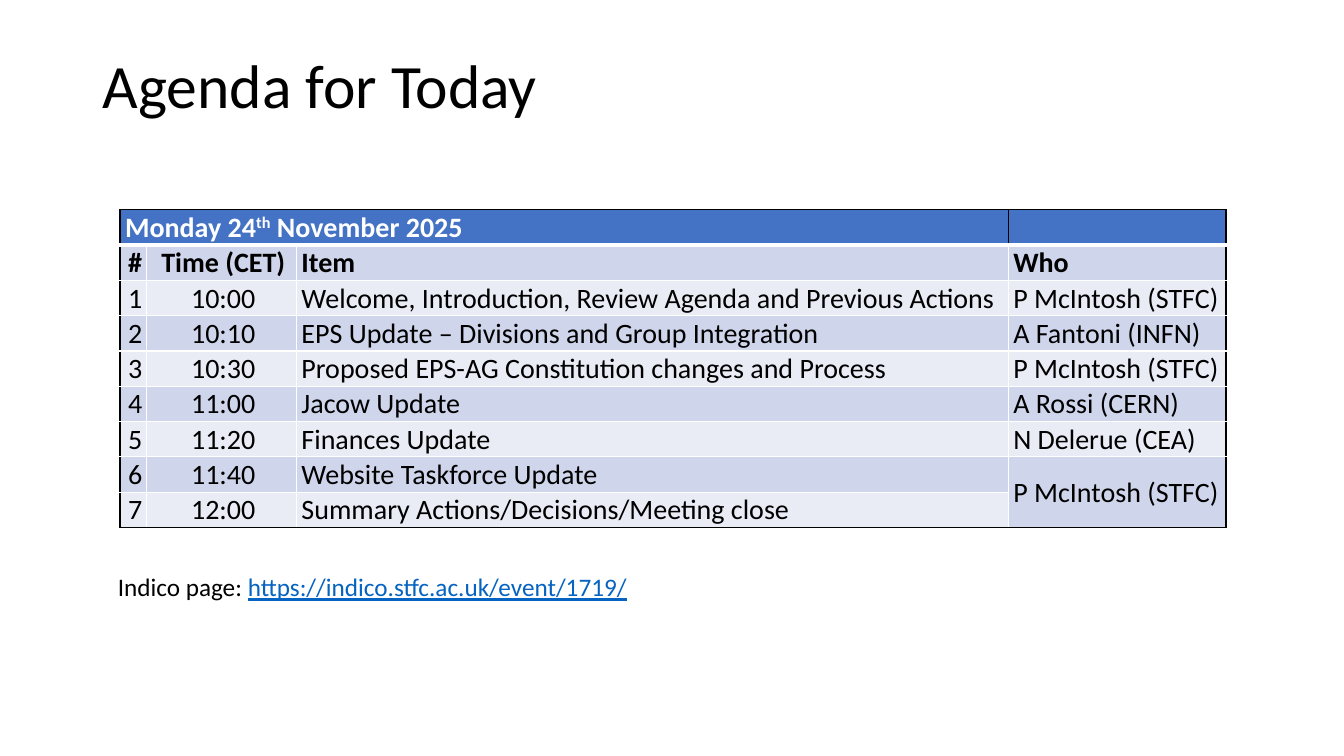
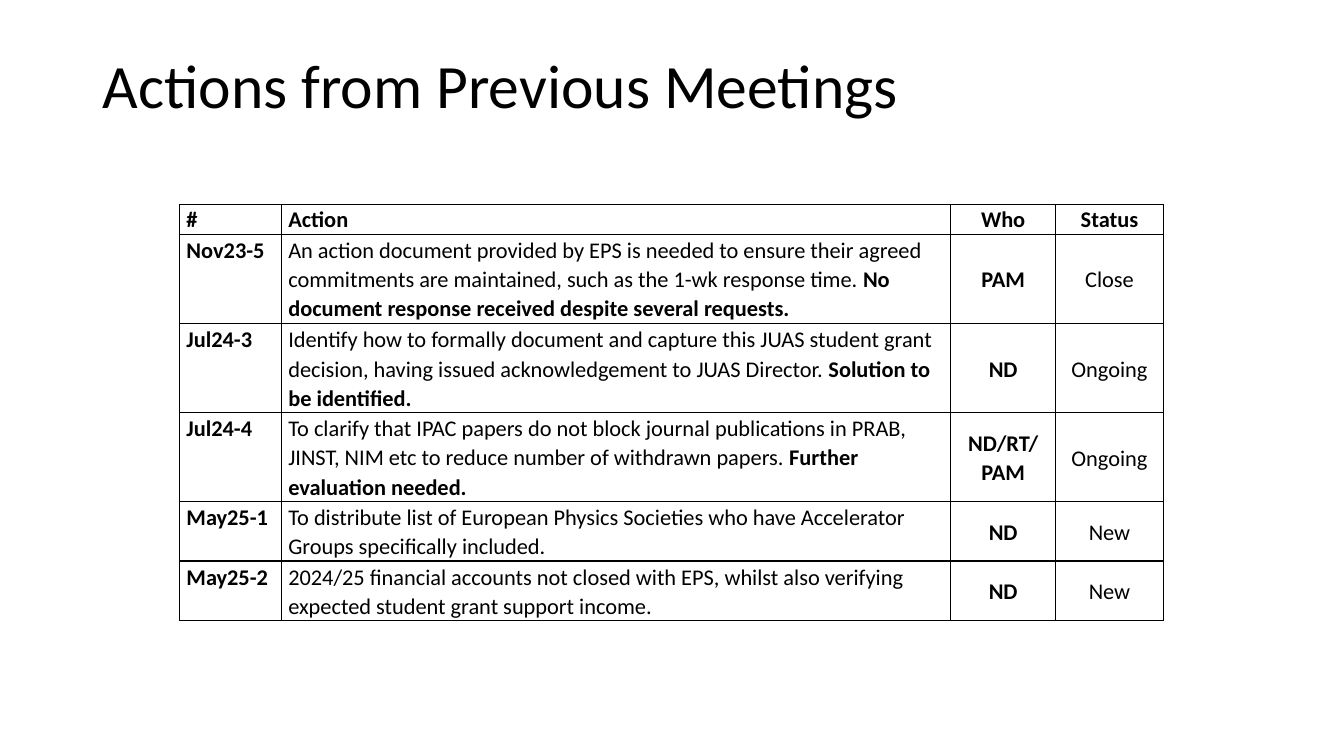
import pptx
import pptx.dml.color
import pptx.enum.text
import pptx.oxml
import pptx.oxml.ns
import pptx.util

Inches = pptx.util.Inches
Pt = pptx.util.Pt
Align = pptx.enum.text.PP_ALIGN
Anchor = pptx.enum.text.MSO_ANCHOR


class Theme:
    font = "Calibri"
    black, white = "000000", "FFFFFF"
    head, dark, light = "4472C4", "CFD5EA", "E9EBF5"
    link = "0563C1"
    title, agenda, note, action = 44, 20, 18, 16


AGENDA = [
    ["#", "Time (CET)", "Item", "Who"],
    ["1", "10:00", "Welcome, Introduction, Review Agenda and Previous Actions",
     "P McIntosh (STFC)"],
    ["2", "10:10", "EPS Update – Divisions and Group Integration", "A Fantoni (INFN)"],
    ["3", "10:30", "Proposed EPS-AG Constitution changes and Process",
     "P McIntosh (STFC)"],
    ["4", "11:00", "Jacow Update", "A Rossi (CERN)"],
    ["5", "11:20", "Finances Update", "N Delerue (CEA)"],
    ["6", "11:40", "Website Taskforce Update", "P McIntosh (STFC)"],
    ["7", "12:00", "Summary Actions/Decisions/Meeting close", ""],
]

# Number, action, bold remark, owner, status
ACTIONS = [
    ["Nov23-5", "An action document provided by EPS is needed to ensure their agreed "
     "commitments are maintained, such as the 1-wk response time. ",
     "No document response received despite several requests.", "PAM", "Close"],
    ["Jul24-3", "Identify how to formally document and capture this JUAS student grant "
     "decision, having issued acknowledgement to JUAS Director. ",
     "Solution to be identified.", "ND", "Ongoing"],
    ["Jul24-4", "To clarify that IPAC papers do not block journal publications in PRAB, "
     "JINST, NIM etc to reduce number of withdrawn papers. ",
     "Further evaluation needed.", "ND/RT/PAM", "Ongoing"],
    ["May25-1", "To distribute list of European Physics Societies who have Accelerator "
     "Groups specifically included.", "", "ND", "New"],
    ["May25-2", "2024/25 financial accounts not closed with EPS, whilst also verifying "
     "expected student grant support income.", "", "ND", "New"],
]


def apply(item, values):
    for name, value in values.items():
        setattr(item, name, value)


def write(para, runs, size, color=Theme.black, **format):
    """Add (text, font values) runs to a paragraph."""
    apply(para, format)
    for text, values in runs:
        run = para.add_run()
        run.text = text
        run.font.color.rgb = pptx.dml.color.RGBColor.from_string(color)
        apply(run.font, {"name": Theme.font, "size": Pt(size), **values})


def border(cell, sides):
    """Draw (colour, width) lines for the L, R, T and B sides."""
    props = cell._tc.get_or_add_tcPr()
    for place, side in enumerate("LRTB"):
        color, width = sides[side]
        props.insert(place, pptx.oxml.parse_xml(
            f'<a:ln{side} {pptx.oxml.ns.nsdecls("a")} w="{Pt(width)}">'
            f'<a:solidFill><a:srgbClr val="{color}"/></a:solidFill></a:ln{side}>'))


def grid(slide, left, top, cols, rows):
    frame = slide.shapes.add_table(len(rows), len(cols), Inches(left), Inches(top),
                                   Inches(sum(cols)), Inches(sum(rows)))
    table = frame.table
    apply(table, {"first_row": False, "horz_banding": False})
    for col, width in zip(table.columns, cols):
        col.width = Inches(width)
    for row, height in zip(table.rows, rows):
        row.height = Inches(height)
    return table


def inset(cell, side, top, bottom, anchor):
    apply(cell, {"margin_left": Inches(side), "margin_right": Inches(side),
                 "margin_top": Inches(top), "margin_bottom": Inches(bottom),
                 "vertical_anchor": anchor})


def titled(deck, text):
    slide = deck.slides.add_slide(deck.slide_layouts[5])
    title = slide.shapes.title
    apply(title, {"left": Inches(0.92), "top": Inches(0.4),
                  "width": Inches(11.5), "height": Inches(0.96)})
    title.text_frame.vertical_anchor = Anchor.MIDDLE
    write(title.text_frame.paragraphs[0], [(text, {})], Theme.title,
          alignment=Align.LEFT, line_spacing=0.9)
    return slide


def agenda_grid(slide, left, top):
    count = len(AGENDA) + 1
    table = grid(slide, left, top, [0.26, 1.49, 7.06, 2.16], [0.35] * count)
    table.cell(0, 0).merge(table.cell(0, 2))
    table.cell(count - 2, 3).merge(table.cell(count - 1, 3))

    for r in range(count):
        for c in range(4):
            cell = table.cell(r, c)
            tall = cell.is_merge_origin and cell.span_height > 1
            inset(cell, 0.01, 0.01, 0, Anchor.MIDDLE if tall else Anchor.BOTTOM)
            fill = Theme.head if r == 0 else Theme.dark if r % 2 else Theme.light
            cell.fill.solid()
            cell.fill.fore_color.rgb = pptx.dml.color.RGBColor.from_string(fill)

            # Black outside and around the heading, white inside
            last = r + (cell.span_height if tall else 1) == count
            edges = {"L": r == 0 or c == 0, "R": r == 0 or c == 3, "T": r == 0, "B": last}
            sides = {side: (Theme.black if edge else Theme.white, 1)
                     for side, edge in edges.items()}
            if r < 2:
                sides["B" if r == 0 else "T"] = (Theme.white, 3)
            border(cell, sides)

            if r and AGENDA[r - 1][c]:
                para = cell.text_frame.paragraphs[0]
                para._p.get_or_add_pPr().set("marL", str(Inches(0.04)))
                write(para, [(AGENDA[r - 1][c], {"bold": r == 1})], Theme.agenda,
                      alignment=Align.CENTER if c < 2 else Align.LEFT)

    # Date heading with a raised ordinal
    date = table.cell(0, 0).text_frame.paragraphs[0]
    date._p.get_or_add_pPr().set("marL", str(Inches(0.04)))
    bold = {"bold": True}
    write(date, [("Monday 24", bold), ("th", bold), (" November 2025", bold)],
          Theme.agenda, Theme.white)
    date.runs[1]._r.get_or_add_rPr().set("baseline", "30000")


def page_note(slide, left, top):
    box = slide.shapes.add_textbox(Inches(left), Inches(top), Inches(5.32), Inches(0.4))
    para = box.text_frame.paragraphs[0]
    write(para, [("Indico page: ", {})], Theme.note)
    write(para, [("https://indico.stfc.ac.uk/event/1719/", {"underline": True})],
          Theme.note, Theme.link)


def action_grid(slide, left, top):
    table = grid(slide, left, top, [1.01, 6.64, 1.04, 1.07],
                 [0.3] + [0.88] * 3 + [0.59] * 2)
    bold, plain = {"bold": True}, {"bold": False}
    rows = [[[(name, bold)] for name in ("#", "Action", "Who", "Status")]]
    for code, task, remark, who, state in ACTIONS:
        runs = [(task, plain)] + ([(remark, bold)] if remark else [])
        rows.append([[(code, bold)], runs, [(who, bold)], [(state, plain)]])

    for r, row in enumerate(rows):
        for c, runs in enumerate(row):
            cell = table.cell(r, c)
            inset(cell, 0.07, 0.01 if r > 1 else 0, 0,
                  Anchor.MIDDLE if r and c > 1 else Anchor.TOP)
            cell.fill.background()
            border(cell, dict.fromkeys("LRTB", (Theme.black, 1)))
            write(cell.text_frame.paragraphs[0], runs, Theme.action,
                  alignment=Align.CENTER if c > 1 else Align.LEFT,
                  line_spacing=1.07, space_after=Pt(8))


def main():
    deck = pptx.Presentation()
    apply(deck, {"slide_width": Inches(13.33), "slide_height": Inches(7.5)})

    # Agenda
    slide = titled(deck, "Agenda for Today")
    agenda_grid(slide, 1.19, 2.08)
    page_note(slide, 1.07, 5.62)

    # Actions
    slide = titled(deck, "Actions from Previous Meetings")
    action_grid(slide, 1.78, 2.03)

    deck.save("out.pptx")


if __name__ == "__main__":
    main()
